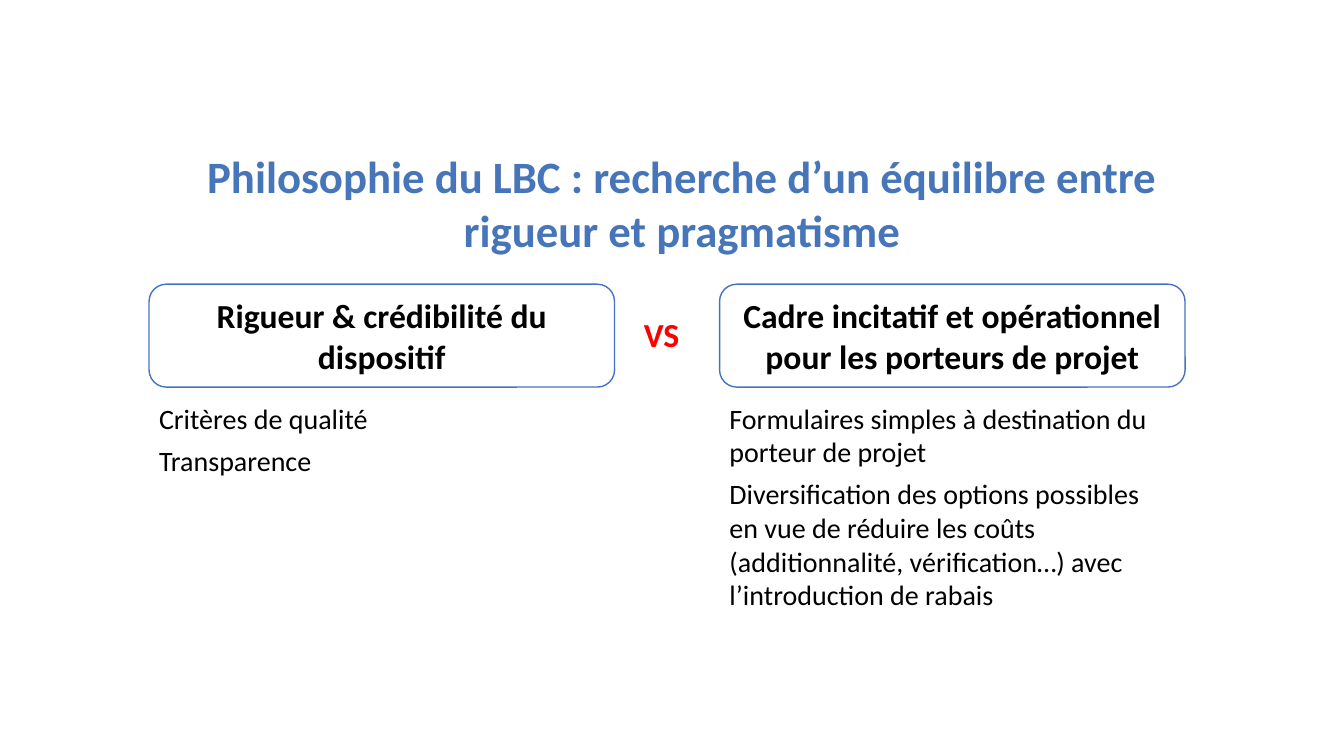
from pptx import Presentation
from pptx.dml.color import RGBColor
from pptx.enum.shapes import MSO_SHAPE
from pptx.enum.text import MSO_ANCHOR, PP_ALIGN
from pptx.util import Pt

BLACK = RGBColor(0x00, 0x00, 0x00)
WHITE = RGBColor(0xFF, 0xFF, 0xFF)
RED = RGBColor(0xFF, 0x00, 0x00)
TITLE_BLUE = RGBColor(0x46, 0x75, 0xB9)
OUTLINE_BLUE = RGBColor(0x44, 0x72, 0xC4)

ROUNDED_RECTANGLE = MSO_SHAPE.ROUNDED_RECTANGLE
CENTER, LEFT = PP_ALIGN.CENTER, PP_ALIGN.LEFT
MIDDLE = MSO_ANCHOR.MIDDLE

HEADING_TOP, HEADING_WIDTH, HEADING_HEIGHT = 203, 332.5, 73.5
BODY_TOP, BODY_HEIGHT = 283, 121

# Left edge, width of the body text, heading, body paragraphs
COLUMNS = [
    (106.5, 289, "Rigueur & crédibilité du dispositif",
     ["Critères de qualité", "Transparence"]),
    (514, 329, "Cadre incitatif et opérationnel pour les porteurs de projet",
     ["Formulaires simples à destination du porteur de projet",
      "Diversification des options possibles en vue de réduire les coûts "
      "(additionnalité, vérification…) avec l’introduction de rabais"]),
]


class SlideBuilder:
    font_name = "Calibri"

    def __init__(self, slide):
        self.slide = slide

    def set_text(self, shape, texts, size, color, bold, alignment, space_after=0):
        frame = shape.text_frame
        frame.word_wrap = True
        for index, text in enumerate(texts):
            paragraph = frame.add_paragraph() if index else frame.paragraphs[0]
            paragraph.text = text
            paragraph.alignment = alignment
            paragraph.space_after = Pt(space_after)
            font = paragraph.font
            font.name, font.size, font.bold = self.font_name, Pt(size), bold
            font.color.rgb = color

    def text_box(self, left, top, width, height, texts, size, color=BLACK,
                 bold=False, alignment=LEFT, space_after=0):
        shape = self.slide.shapes.add_textbox(Pt(left), Pt(top), Pt(width), Pt(height))
        self.set_text(shape, texts, size, color, bold, alignment, space_after)

    def heading_box(self, left, text):
        shape = self.slide.shapes.add_shape(
            ROUNDED_RECTANGLE, Pt(left), Pt(HEADING_TOP),
            Pt(HEADING_WIDTH), Pt(HEADING_HEIGHT))
        shape.shadow.inherit = False
        shape.fill.solid()
        shape.fill.fore_color.rgb = WHITE
        shape.line.color.rgb = OUTLINE_BLUE
        shape.line.width = Pt(1)
        shape.text_frame.vertical_anchor = MIDDLE
        self.set_text(shape, [text], 24, BLACK, True, CENTER)


def main():
    presentation = Presentation()
    presentation.slide_width, presentation.slide_height = Pt(960), Pt(540)
    builder = SlideBuilder(presentation.slides.add_slide(presentation.slide_layouts[6]))

    builder.text_box(94.5, 103, 785.5, 90,
                     ["Philosophie du LBC : recherche d’un équilibre entre "
                      "rigueur et pragmatisme"],
                     32, TITLE_BLUE, True, CENTER)
    for left, body_width, heading, body in COLUMNS:
        builder.text_box(left, BODY_TOP, body_width, BODY_HEIGHT, body, 20, space_after=6)
        builder.heading_box(left, heading)
    builder.text_box(422, 221, 101, 36, ["VS"], 24, RED, True, CENTER)

    presentation.save("out.pptx")


if __name__ == "__main__":
    main()
